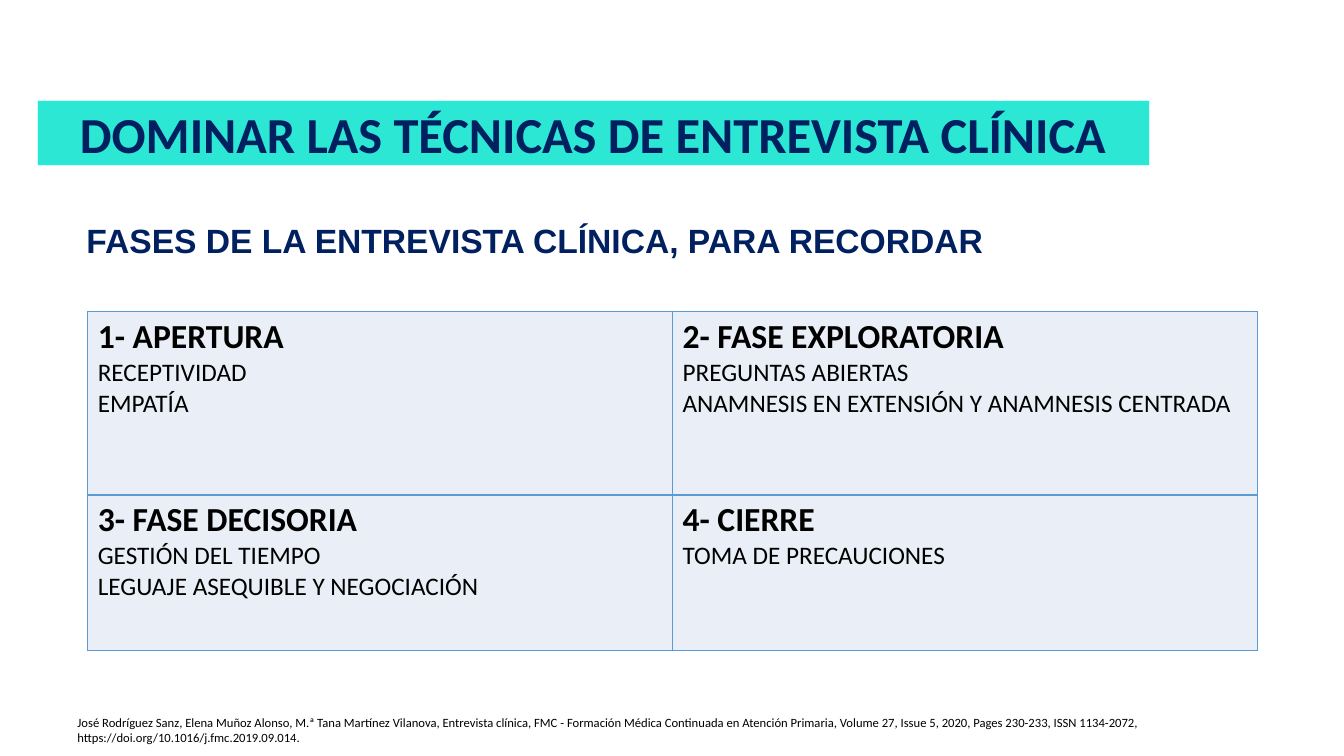
from lxml.etree import SubElement
from pptx import Presentation
from pptx.dml.color import RGBColor
from pptx.enum.shapes import MSO_SHAPE
from pptx.enum.text import MSO_ANCHOR, PP_ALIGN
from pptx.oxml.ns import qn
from pptx.util import Inches, Pt

PHASES = [
    [("1- APERTURA", "RECEPTIVIDAD", "EMPATÍA"),
     ("2- FASE EXPLORATORIA", "PREGUNTAS ABIERTAS",
      "ANAMNESIS EN EXTENSIÓN Y ANAMNESIS CENTRADA")],
    [("3- FASE DECISORIA", "GESTIÓN DEL TIEMPO",
      "LEGUAJE ASEQUIBLE Y NEGOCIACIÓN"),
     ("4- CIERRE", "TOMA DE PRECAUCIONES")],
]
REFERENCE = (
    "José Rodríguez Sanz, Elena Muñoz Alonso, M.ª Tana Martínez Vilanova, "
    "Entrevista clínica, FMC - Formación Médica Continuada en Atención Primaria, "
    "Volume 27, Issue 5, 2020, Pages 230-233, ISSN 1134-2072, "
    "https://doi.org/10.1016/j.fmc.2019.09.014."
)


def rgb(value):
    return RGBColor.from_string(value)


class Deck:
    """Style and current slide, with a method for each kind of element."""

    navy, black = "002060", "000000"
    turquoise, pale_cyan = "2DE7D5", "CCFFFF"
    cell_fill, border = "EAEFF7", "5B9BD5"

    def __init__(self, prs):
        self.s = prs.slides.add_slide(prs.slide_layouts[6])

    def paragraph(self, p, text, size, color, bold=False, font="Calibri"):
        p.text = text
        p.font.name = font
        p.font.size = Pt(size)
        p.font.bold = bold
        p.font.color.rgb = rgb(color)

    def banner(self, text, x, y, w, h):
        sp = self.s.shapes.add_shape(
            MSO_SHAPE.RECTANGLE, Inches(x), Inches(y), Inches(w), Inches(h))
        sp.shadow.inherit = False
        sp.fill.solid()
        sp.fill.fore_color.rgb = rgb(self.turquoise)
        sp.line.color.rgb = rgb(self.pale_cyan)
        sp.line.width = Pt(1)
        tf = sp.text_frame
        tf.vertical_anchor = MSO_ANCHOR.MIDDLE
        p = tf.paragraphs[0]
        p.alignment = PP_ALIGN.CENTER
        self.paragraph(p, text, 36, self.navy, bold=True)

    def text(self, text, x, y, w, h, anchor=MSO_ANCHOR.TOP, **style):
        sp = self.s.shapes.add_textbox(Inches(x), Inches(y), Inches(w), Inches(h))
        tf = sp.text_frame
        tf.word_wrap = True
        tf.vertical_anchor = anchor
        self.paragraph(tf.paragraphs[0], text, **style)

    def table(self, rows, x, y, w, heights):
        shape = self.s.shapes.add_table(
            len(rows), len(rows[0]), Inches(x), Inches(y),
            Inches(w), Inches(sum(heights)))
        table = shape.table
        for row, height in zip(table.rows, heights):
            row.height = Inches(height)
        for row, entries in zip(table.rows, rows):
            for cell, lines in zip(row.cells, entries):
                self.cell(cell, lines)

    def cell(self, cell, lines):
        tf = cell.text_frame
        for i, line in enumerate(lines):
            p = tf.add_paragraph() if i else tf.paragraphs[0]
            self.paragraph(p, line, 18 if i else 24, self.black, bold=i == 0)
        tc_pr = cell._tc.get_or_add_tcPr()
        for side in ("a:lnL", "a:lnR", "a:lnT", "a:lnB"):
            ln = SubElement(tc_pr, qn(side), w=str(Pt(1)))
            fill = SubElement(ln, qn("a:solidFill"))
            SubElement(fill, qn("a:srgbClr"), val=self.border)
        cell.fill.solid()
        cell.fill.fore_color.rgb = rgb(self.cell_fill)


def main():
    prs = Presentation()
    prs.slide_width, prs.slide_height = Inches(13.33), Inches(7.5)
    deck = Deck(prs)
    deck.banner("DOMINAR LAS TÉCNICAS DE ENTREVISTA CLÍNICA", 0.37, 1, 11.03, 0.64)
    deck.table(PHASES, 0.87, 3.09, 11.6, [1.82, 1.54])
    deck.text("FASES DE LA ENTREVISTA CLÍNICA, PARA RECORDAR", 0.76, 2.13, 12.1, 0.5,
              size=24, color=deck.navy, bold=True, font="Arial")
    deck.text(REFERENCE, 0.67, 7.02, 12.1, 0.45, anchor=MSO_ANCHOR.MIDDLE,
              size=9, color=deck.black)
    prs.save("out.pptx")


if __name__ == "__main__":
    main()
